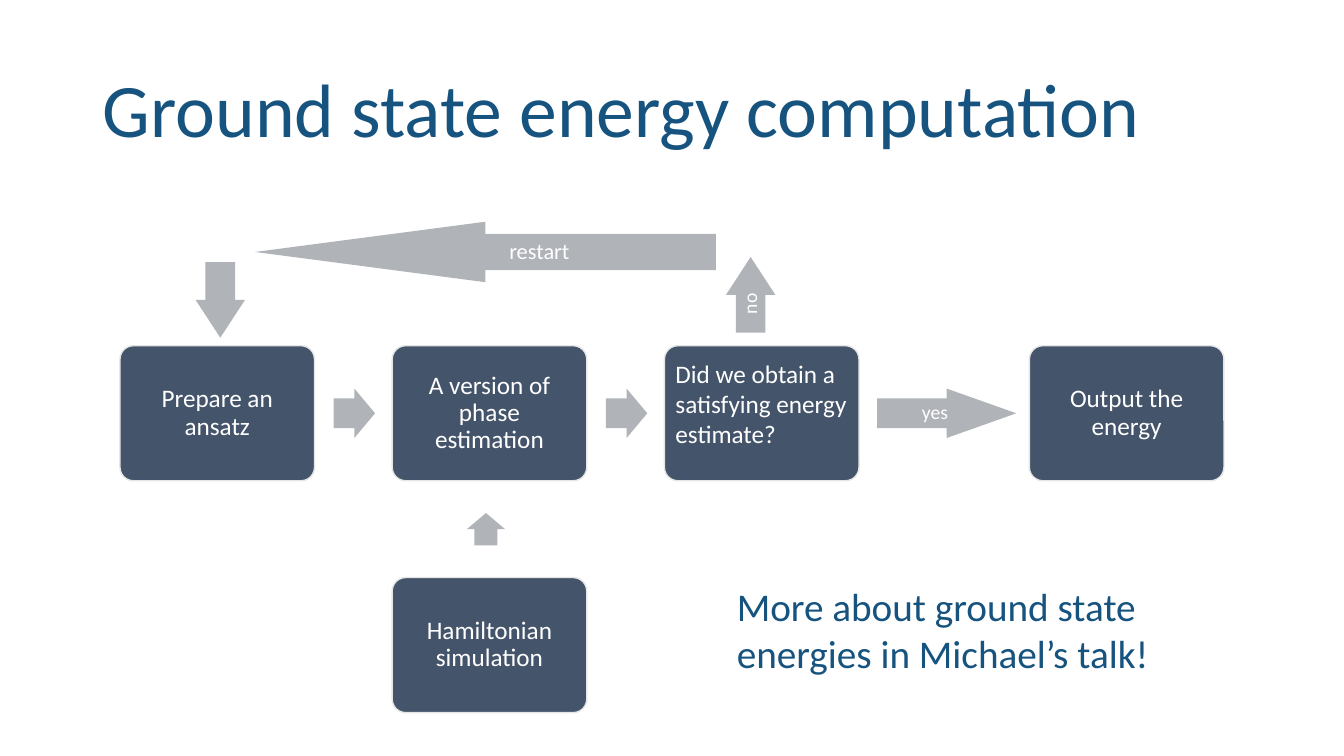
import pptx
import pptx.dml.color
import pptx.enum.shapes
import pptx.enum.text
import pptx.util

Inches = pptx.util.Inches
RGBColor = pptx.dml.color.RGBColor
Shape = pptx.enum.shapes.MSO_SHAPE
Align = pptx.enum.text.PP_ALIGN
Anchor = pptx.enum.text.MSO_ANCHOR

TITLE_BLUE = RGBColor(0x16, 0x53, 0x7F)
STEP_NAVY = RGBColor(0x44, 0x54, 0x6A)
STEP_EDGE = RGBColor(0xE7, 0xE6, 0xE6)
ARROW_GREY = RGBColor(0xB0, 0xB4, 0xB9)
WHITE = RGBColor(0xFF, 0xFF, 0xFF)

STEP_WIDTH, STEP_HEIGHT = 1.93, 1.34
FLOW_TOP, SIMULATION_TOP = 3.43, 5.73
PREPARE_LEFT, ESTIMATION_LEFT, CHECK_LEFT, OUTPUT_LEFT = 1.19, 3.89, 6.59, 10.21
ARROW_HEIGHT = 0.49
FLOW_ARROW_TOP = FLOW_TOP + (STEP_HEIGHT - ARROW_HEIGHT) / 2


def write(shape, text, size=18, color=WHITE, align=Align.CENTER,
          anchor=Anchor.MIDDLE, spacing=0.9, insets=(0.07, 0.07, 0.07, 0.07)):
    """Fill a shape with text, one paragraph per line; insets run left, top, right, bottom."""
    frame = shape.text_frame
    frame.word_wrap = True
    frame.vertical_anchor = anchor
    frame.margin_left, frame.margin_top, frame.margin_right, frame.margin_bottom = map(Inches, insets)
    frame.text = text
    for paragraph in frame.paragraphs:
        paragraph.alignment = align
        paragraph.line_spacing = spacing
        paragraph.font.size = pptx.util.Pt(size)
        paragraph.font.name = "Calibri"
        paragraph.font.color.rgb = color


def add_filled(slide, preset, left, top, width, height, color):
    shape = slide.shapes.add_shape(preset, Inches(left), Inches(top), Inches(width), Inches(height))
    shape.shadow.inherit = False
    shape.fill.solid()
    shape.fill.fore_color.rgb = color
    return shape


def add_step(slide, text, left, top=FLOW_TOP, **text_format):
    step = add_filled(slide, Shape.ROUNDED_RECTANGLE, left, top, STEP_WIDTH, STEP_HEIGHT, STEP_NAVY)
    step.adjustments[0] = 0.1
    step.line.color.rgb = STEP_EDGE
    step.line.width = pptx.util.Pt(1)
    write(step, text, **text_format)


def add_arrow(slide, left, top, width, height=ARROW_HEIGHT, preset=Shape.RIGHT_ARROW, rotation=0):
    """Add an arrow whose head takes half of its length."""
    arrow = add_filled(slide, preset, left, top, width, height, ARROW_GREY)
    arrow.adjustments[0] = 0.6
    arrow.adjustments[1] = 0.5 * width / min(width, height)
    arrow.line.fill.background()
    arrow.rotation = rotation
    return arrow


def main():
    presentation = pptx.Presentation()
    presentation.slide_width = Inches(13.33)
    presentation.slide_height = Inches(7.5)
    slide = presentation.slides.add_slide(presentation.slide_layouts[5])

    title = slide.shapes.title
    title.left, title.top, title.width, title.height = map(Inches, (0.92, 0.4, 11.5, 1.45))
    write(title, "Ground state energy computation", size=54, color=TITLE_BLUE,
          align=Align.LEFT, insets=(0.1, 0.05, 0.1, 0.05))

    add_step(slide, "Prepare an ansatz", PREPARE_LEFT)
    add_step(slide, "A version of phase estimation", ESTIMATION_LEFT)
    add_step(slide, "Did we obtain a\nsatisfying energy\nestimate?", CHECK_LEFT,
             align=Align.LEFT, spacing=1.0, insets=(0.07, 0.07, 0, 0.26))
    add_step(slide, "Output the energy", OUTPUT_LEFT)
    add_step(slide, "Hamiltonian simulation", ESTIMATION_LEFT, top=SIMULATION_TOP)

    for step_left in (PREPARE_LEFT, ESTIMATION_LEFT):
        add_arrow(slide, step_left + STEP_WIDTH + 0.19, FLOW_ARROW_TOP, 0.41)
    yes = add_arrow(slide, 8.7, FLOW_ARROW_TOP, 1.38)
    write(yes, "yes", size=14, insets=(0.18, 0, 0, 0))
    no = add_arrow(slide, 7.07, 2.68, 0.75, rotation=270)
    write(no, "no", size=14, insets=(0.05, 0, 0, 0))
    restart = add_arrow(slide, 2.53, 2.2, 4.57, height=0.6, preset=Shape.LEFT_ARROW)
    write(restart, "restart", size=16, insets=(0, 0, 0.3, 0))
    add_arrow(slide, 1.81, 2.73, 0.75, rotation=90)
    add_arrow(slide, 4.66, 5.06, 0.32, height=0.38, rotation=270)

    talk_pointer = slide.shapes.add_textbox(Inches(7.21), Inches(5.73), Inches(4.71), Inches(1.04))
    write(talk_pointer, "More about ground state energies in Michael’s talk!", size=28,
          color=TITLE_BLUE, align=Align.LEFT, anchor=Anchor.TOP, spacing=1.0,
          insets=(0.1, 0.05, 0.1, 0.05))

    presentation.save("out.pptx")


if __name__ == "__main__":
    main()
